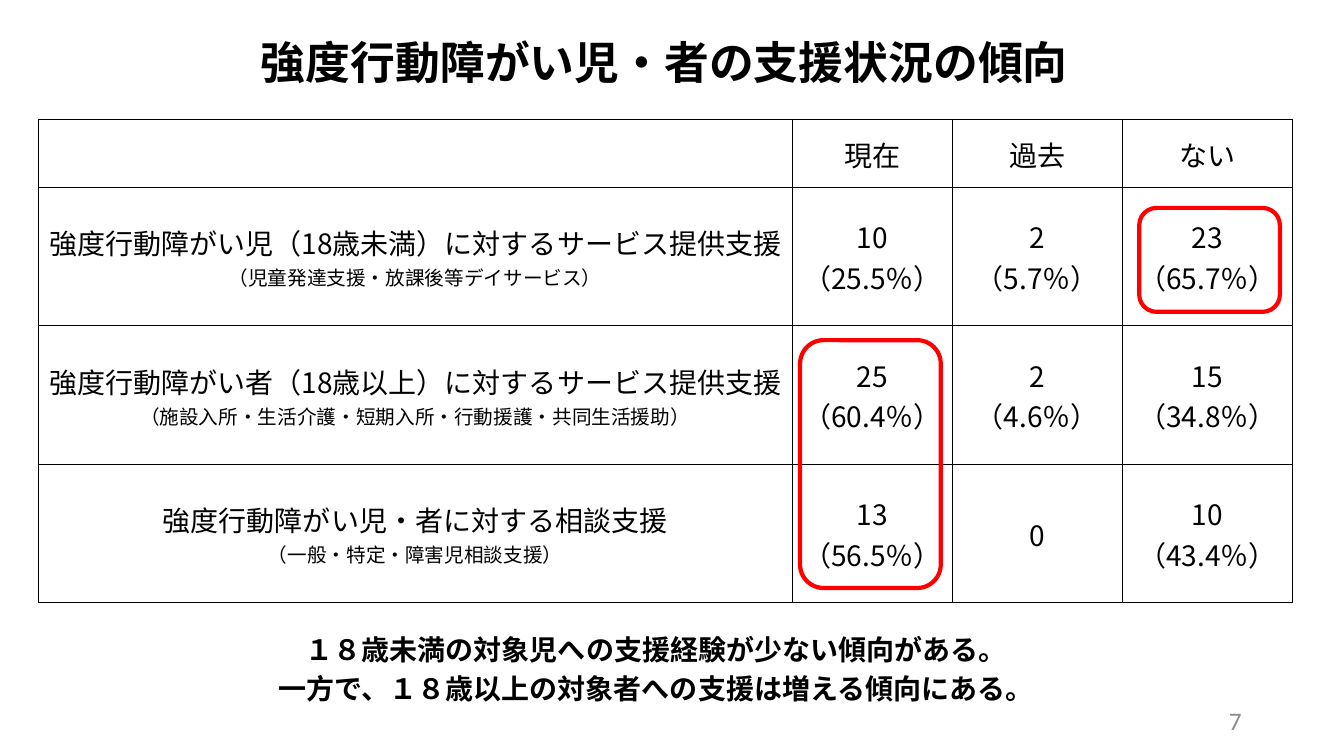
from lxml import etree
from pptx import Presentation
from pptx.dml.color import RGBColor
from pptx.enum.shapes import MSO_SHAPE
from pptx.enum.text import MSO_ANCHOR, PP_ALIGN
from pptx.oxml.ns import qn
from pptx.util import Emu, Pt

CENTER, RIGHT = PP_ALIGN.CENTER, PP_ALIGN.RIGHT
TOP, MIDDLE = MSO_ANCHOR.TOP, MSO_ANCHOR.MIDDLE
ROUNDED = MSO_SHAPE.ROUNDED_RECTANGLE
COLORS = {"ink": "000000", "mark": "FF0000", "muted": "8C8C8C"}
HEAD_FONT, BODY_FONT = "Calibri", "Noto Sans CJK JP"
COL_WIDTHS = [719, 152, 162, 162]
ROW_HEIGHTS = [64, 132, 132, 132]
ROWS = [
    ["", "現在", "過去", "ない"],
    ["強度行動障がい児（18歳未満）に対するサービス提供支援\n（児童発達支援・放課後等デイサービス）",
     "10\n（25.5％）", "2\n（5.7％）", "23\n（65.7％）"],
    ["強度行動障がい者（18歳以上）に対するサービス提供支援\n（施設入所・生活介護・短期入所・行動援護・共同生活援助）",
     "25\n（60.4％）", "2\n（4.6％）", "15\n（34.8％）"],
    ["強度行動障がい児・者に対する相談支援\n（一般・特定・障害児相談支援）",
     "13\n（56.5％）", "0", "10\n（43.4％）"],
]


def px(n):
    """Turn px into EMU."""
    return Emu(n * 9525)


class Deck:
    """Holds the style and the current slide."""

    def __init__(self, prs):
        self.s = prs.slides.add_slide(prs.slide_layouts[6])

    def style(self, p, font, size, color="ink", bold=False, align=CENTER):
        """Set the font and alignment of a paragraph."""
        p.alignment = align
        p.font.name, p.font.size, p.font.bold = font, Pt(size), bold
        p.font.color.rgb = RGBColor.from_string(COLORS[color])

    def text(self, box, lines, size, spacing=None, anchor=TOP, **look):
        """Add a text box with one paragraph per line."""
        tf = self.s.shapes.add_textbox(*map(px, box)).text_frame
        tf.word_wrap, tf.vertical_anchor = True, anchor
        for i, line in enumerate(lines):
            p = tf.add_paragraph() if i else tf.paragraphs[0]
            p.add_run().text = line
            p.line_spacing = spacing
            self.style(p, HEAD_FONT, size, **look)

    def frame(self, *box):
        """Add a rounded outline around table cells."""
        sp = self.s.shapes.add_shape(ROUNDED, *map(px, box))
        sp.shadow.inherit = False
        sp.fill.background()
        sp.line.color.rgb = RGBColor.from_string(COLORS["mark"])
        sp.line.width = Pt(3)

    def borders(self, cell):
        """Draw a thin line on all four sides of a cell."""
        tcPr = cell._tc.get_or_add_tcPr()
        for i, side in enumerate(("a:lnL", "a:lnR", "a:lnT", "a:lnB")):
            ln = etree.Element(qn(side), w=str(Pt(0.5)))
            fill = etree.SubElement(ln, qn("a:solidFill"))
            etree.SubElement(fill, qn("a:srgbClr"), val=COLORS["ink"])
            tcPr.insert(i, ln)

    def cell(self, cell, text, second_size):
        """Fill one cell, with its second line in the given size."""
        cell.fill.background()
        cell.vertical_anchor = MIDDLE
        cell.margin_left = cell.margin_right = cell.margin_top = px(1)
        cell.margin_bottom = 0
        self.borders(cell)
        p = cell.text_frame.paragraphs[0]
        self.style(p, BODY_FONT, 20)
        etree.SubElement(p._p.pPr.find(qn("a:defRPr")), qn("a:ea"), typeface=BODY_FONT)
        for i, line in enumerate(text.split("\n")):
            if i:
                p.add_line_break()
            r = p.add_run()
            r.text = line
            if i and second_size:
                r.font.size = Pt(second_size)

    def table(self, x, y, widths, heights, rows):
        """Add a bordered table whose first column has small second lines."""
        box = map(px, (x, y, sum(widths), sum(heights)))
        tbl = self.s.shapes.add_table(len(heights), len(widths), *box).table
        tbl.first_row = tbl.horz_banding = False
        for col, width in zip(tbl.columns, widths):
            col.width = px(width)
        for row, height, texts in zip(tbl.rows, heights, rows):
            row.height = px(height)
            for i, (cell, text) in enumerate(zip(row.cells, texts)):
                self.cell(cell, text, None if i else 14)


def main():
    """Build the slide and save it."""
    prs = Presentation()
    prs.slide_width, prs.slide_height = px(1280), px(720)
    deck = Deck(prs)
    deck.table(36, 114, COL_WIDTHS, ROW_HEIGHTS, ROWS)
    deck.frame(1085, 198, 134, 99)
    deck.text((47, 34, 1172, 61), ["強度行動障がい児・者の支援状況の傾向"], 32, 0.9, bold=True)
    deck.text((20, 592, 1210, 84),
              ["１８歳未満の対象児への支援経験が少ない傾向がある。",
               "一方で、１８歳以上の対象者への支援は増える傾向にある。"],
              20, Pt(28), bold=True)
    deck.frame(762, 324, 134, 236)
    deck.text((904, 667, 288, 38), ["7"], 18, anchor=MIDDLE, color="muted", align=RIGHT)
    prs.save("out.pptx")


if __name__ == "__main__":
    main()
